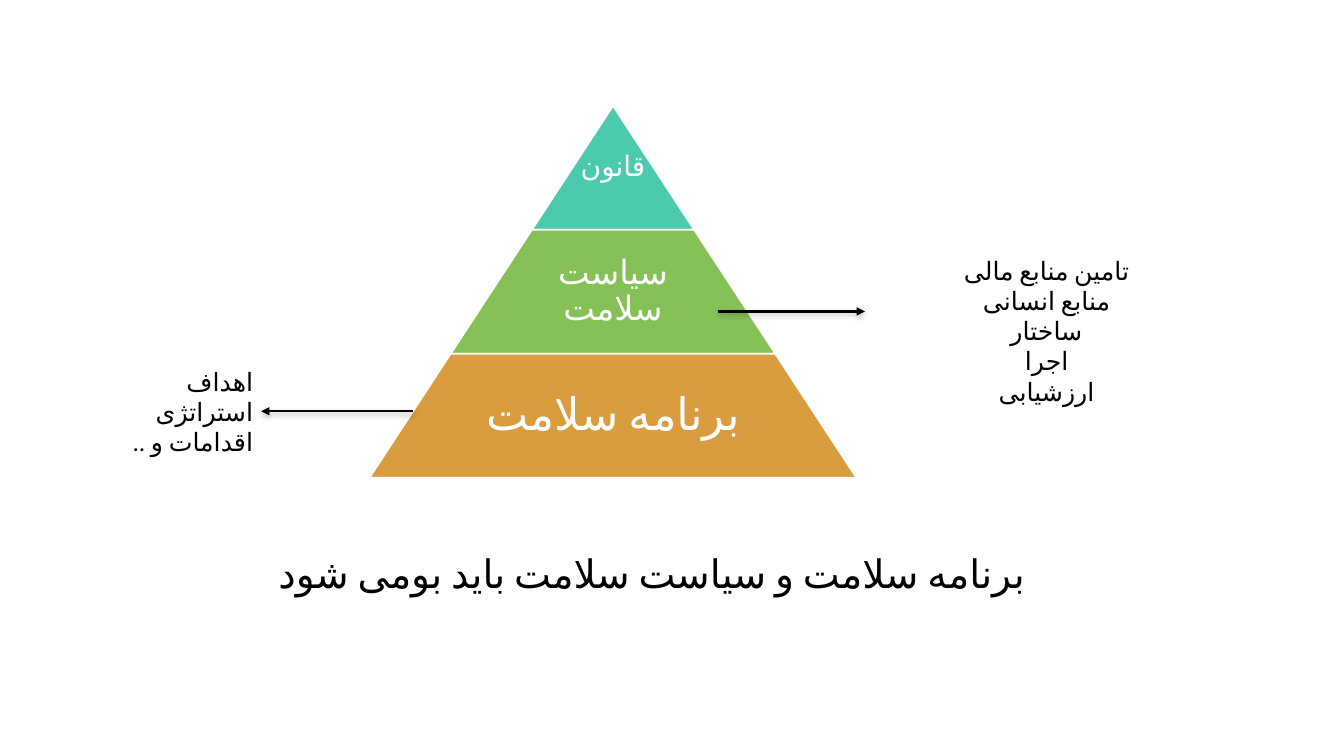
from lxml import etree
from pptx import Presentation
from pptx.dml.color import RGBColor
from pptx.enum.shapes import MSO_CONNECTOR, MSO_SHAPE
from pptx.enum.text import MSO_ANCHOR, PP_ALIGN
from pptx.oxml import parse_xml
from pptx.oxml.ns import qn
from pptx.util import Inches, Pt

CENTER, RIGHT = PP_ALIGN.CENTER, PP_ALIGN.RIGHT
TOP, MIDDLE = MSO_ANCHOR.TOP, MSO_ANCHOR.MIDDLE
TRAPEZOID, STRAIGHT = MSO_SHAPE.TRAPEZOID, MSO_CONNECTOR.STRAIGHT

THEME = {
    "font": "Calibri",
    "black": RGBColor.from_string("000000"),
    "white": RGBColor.from_string("FFFFFF"),
    "teal": RGBColor.from_string("4BCAAD"),
    "green": RGBColor.from_string("86C157"),
    "amber": RGBColor.from_string("D99C3F"),
    "title": 28,
    "note": 18,
    "law": 20,
    "policy": 24,
    "plan": 32,
}
SHADOW = (
    '<a:effectLst xmlns:a="http://schemas.openxmlformats.org/drawingml/2006/main">'
    '<a:outerShdw blurRad="50800" dist="25400" dir="5400000" rotWithShape="0">'
    '<a:srgbClr val="000000"><a:alpha val="28000"/></a:srgbClr>'
    '</a:outerShdw></a:effectLst>'
)


def write(box, text, size, color="black", align=CENTER, anchor=TOP, space=None, inset=None):
    frame = box.text_frame
    frame.word_wrap = True
    frame.vertical_anchor = anchor
    if inset is not None:
        frame.margin_left = frame.margin_right = Inches(inset)
        frame.margin_top = frame.margin_bottom = Inches(inset)
    frame.text = text
    for para in frame.paragraphs:
        para.alignment = align
        para._p.get_or_add_pPr().set("rtl", "1")
        if space:
            para.line_spacing = space
        for run in para.runs:
            run.font.name = THEME["font"]
            run.font.size = Pt(THEME[size])
            run.font.color.rgb = THEME[color]
            props = run._r.get_or_add_rPr()
            props.set("lang", "fa-IR")
            etree.SubElement(props, qn("a:cs"), typeface=THEME["font"])


deck = Presentation()
deck.slide_width, deck.slide_height = Inches(13.33), Inches(7.5)
slide = deck.slides.add_slide(deck.slide_layouts[5])

title = slide.shapes.title
title.left, title.top = Inches(0.8), Inches(4.84)
title.width, title.height = Inches(11.33), Inches(1.75)
write(title, "برنامه سلامت و سیاست سلامت باید بومی شود", "title", anchor=MIDDLE, space=0.9)

MID, PEAK, STEP, TIER = 6.08, 1.05, 1.61, 1.23
tiers = [
    ("قانون", "law", "teal", 0.03),
    ("سیاست سلامت", "policy", "green", 0.03),
    ("برنامه سلامت", "plan", "amber", 0.04),
]
pyramid = slide.shapes.add_group_shape().shapes
for row, (text, size, color, inset) in enumerate(tiers):
    top, wide = PEAK + row * TIER, STEP * (row + 1)
    tier = pyramid.add_shape(
        TRAPEZOID, Inches(MID - wide / 2), Inches(top), Inches(wide), Inches(TIER))
    tier.adjustments[0] = STEP / 2 / TIER
    tier.shadow.inherit = False
    tier.fill.solid()
    tier.fill.fore_color.rgb = THEME[color]
    tier.line.color.rgb = THEME["white"]
    tier.line.width = Pt(1.25)
    span = max(STEP, wide * 0.65)
    label = pyramid.add_textbox(
        Inches(MID - span / 2), Inches(top), Inches(span), Inches(TIER))
    write(label, text, size, "white", anchor=MIDDLE, space=0.9, inset=inset)

notes = [
    ("تامین منابع مالی\nمنابع انسانی\nساختار\nاجرا\nارزشیابی",
     CENTER, (8.31, 2.48, 4.14, 1.92), (7.12, 8.58, 3.09)),
    ("اهداف\nاستراتژی\nاقدامات و ..",
     RIGHT, (0.61, 3.58, 2, 1.01), (4.1, 2.59, 4.08)),
]
for text, align, place, (start, end, level) in notes:
    arrow = slide.shapes.add_connector(
        STRAIGHT, Inches(start), Inches(level), Inches(end), Inches(level))
    arrow.line.color.rgb = THEME["black"]
    arrow.line.width = Pt(1.75)
    etree.SubElement(arrow.line._get_or_add_ln(), qn("a:tailEnd"), type="triangle")
    arrow._element.spPr.append(parse_xml(SHADOW))
    note = slide.shapes.add_textbox(*map(Inches, place))
    write(note, text, "note", align=align)

deck.save("out.pptx")
